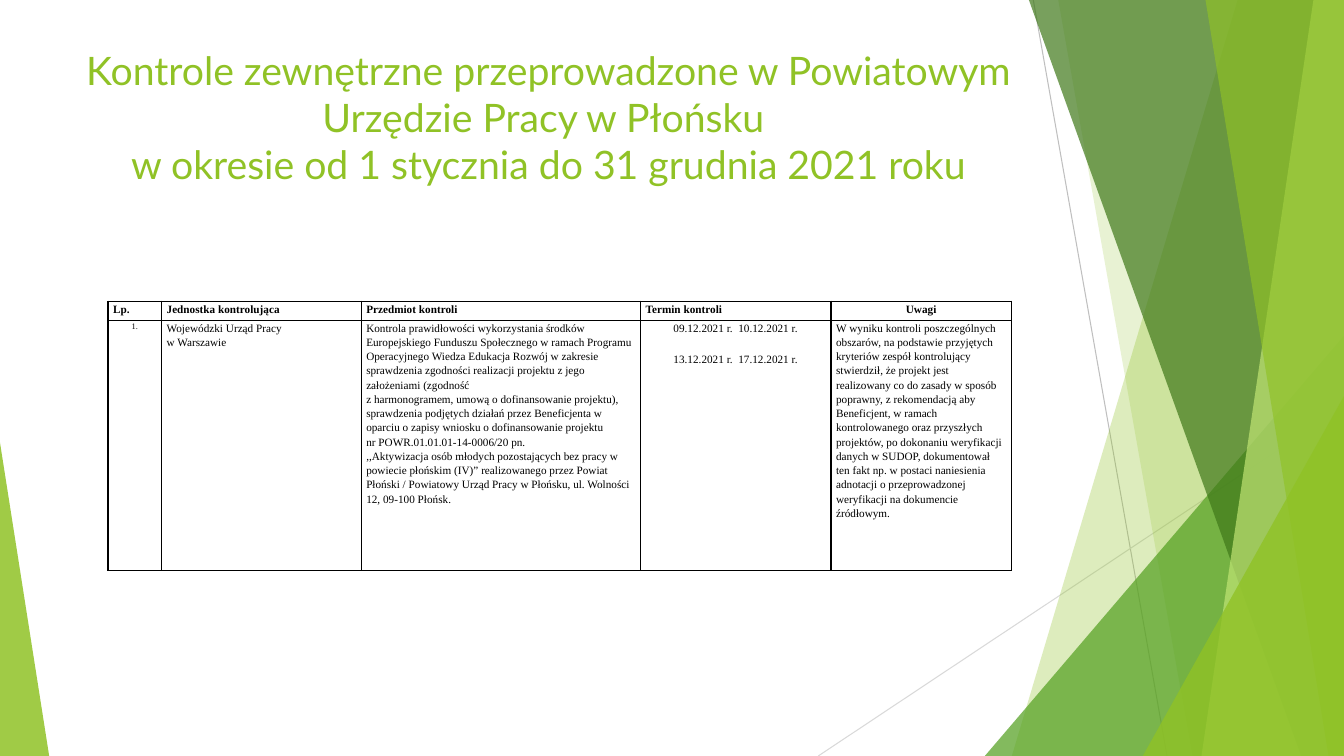
from lxml.etree import SubElement
from pptx import Presentation
from pptx.dml.color import RGBColor
from pptx.enum.shapes import MSO_CONNECTOR, MSO_SHAPE
from pptx.enum.text import MSO_ANCHOR, MSO_AUTO_SIZE, PP_ALIGN
from pptx.oxml import parse_xml
from pptx.oxml.ns import nsdecls, qn
from pptx.util import Cm, Pt

WIDE, HIGH = 33.87, 19.05
LIME, BLACK = "90C226", "000000"
LEFT, MID = PP_ALIGN.LEFT, PP_ALIGN.CENTER

TITLE = ("Kontrole zewnętrzne przeprowadzone w Powiatowym Urzędzie Pracy w Płońsku \v"
         "w okresie od 1 stycznia do 31 grudnia 2021 roku")
HEADS = ["Lp.", "Jednostka kontrolująca", "Przedmiot kontroli", "Termin kontroli", "Uwagi"]
ENTRY = [
    "1.",
    "Wojewódzki Urząd Pracy \vw Warszawie",
    "Kontrola prawidłowości wykorzystania środków Europejskiego Funduszu Społecznego "
    "w ramach Programu Operacyjnego Wiedza Edukacja Rozwój w zakresie sprawdzenia zgodności "
    "realizacji projektu z jego założeniami (zgodność \vz harmonogramem, umową o dofinansowanie "
    "projektu), sprawdzenia podjętych działań przez Beneficjenta w oparciu o zapisy wniosku "
    "o dofinansowanie projektu \vnr POWR.01.01.01-14-0006/20 pn. \v,,Aktywizacja osób młodych "
    "pozostających bez pracy w powiecie płońskim (IV)” realizowanego przez Powiat Płoński / "
    "Powiatowy Urząd Pracy w Płońsku, ul. Wolności 12, 09-100 Płońsk.",
    "09.12.2021 r.  10.12.2021 r.\n13.12.2021 r.  17.12.2021 r.",
    "W wyniku kontroli poszczególnych obszarów, na podstawie przyjętych kryteriów zespół "
    "kontrolujący stwierdził, że projekt jest realizowany co do zasady w sposób poprawny, "
    "z rekomendacją aby Beneficjent, w ramach kontrolowanego oraz przyszłych projektów, "
    "po dokonaniu weryfikacji danych w SUDOP, dokumentował ten fakt np. w postaci naniesienia "
    "adnotacji o przeprowadzonej weryfikacji na dokumencie źródłowym.",
]
COLS = [1.35, 5.03, 7.04, 4.8, 4.55]
ROWS = [
    (0.48, HEADS, [LEFT, LEFT, LEFT, LEFT, MID], [8] * 5, True),
    (6.3, ENTRY, [MID, LEFT, LEFT, MID, LEFT], [6, 8, 8, 8, 8], False),
]


def color(code):
    """Turn a hex string into a colour."""
    return RGBColor.from_string(code)


def apply(thing, values):
    """Set each named value on an object."""
    for name, value in values.items():
        setattr(thing, name, value)


def write(frame, text, para, font, code):
    """Fill a text frame and format its paragraphs and runs."""
    frame.text = text
    for item in frame.paragraphs:
        apply(item, para)
        for run in item.runs:
            apply(run.font, font)
            run.font.color.rgb = color(code)


def paint(shape, code, alpha):
    """Give a shape a see-through fill without line or shadow."""
    shape.shadow.inherit = False
    shape.fill.solid()
    shape.fill.fore_color.rgb = color(code)
    shape.line.fill.background()
    tint = shape.fill._xPr.find(".//" + qn("a:srgbClr"))
    SubElement(tint, qn("a:alpha"), val=str(alpha * 1000))


def ray(slide, start, end, code):
    """Draw a thin line between two points."""
    line = slide.shapes.add_connector(
        MSO_CONNECTOR.STRAIGHT, *[Cm(n) for n in (*start, *end)])
    line.line.width = Pt(0.75)
    line.line.color.rgb = color(code)
    SubElement(line._element.spPr, qn("a:effectLst"))


def band(slide, box, top, foot, code, alpha):
    """Draw a slanted band reaching the right side of the box."""
    x, y, w, h = box
    pen = slide.shapes.build_freeform(Cm(x + top), Cm(y), scale=1.0)
    ends = [(x + w, y), (x + w, y + h), (x + foot, y + h)]
    pen.add_line_segments([(Cm(a), Cm(b)) for a, b in ends], close=True)
    paint(pen.convert_to_shape(), code, alpha)


def wedge(slide, box, peak, code, alpha):
    """Draw a triangle with its peak at the given share of the width."""
    shape = slide.shapes.add_shape(MSO_SHAPE.ISOSCELES_TRIANGLE, *[Cm(n) for n in box])
    shape.adjustments[0] = peak
    paint(shape, code, alpha)


def facets(slide, box):
    """Draw the layered facets on the right side."""
    x, y, w, h = box

    def corner(wide, high):
        """Return a box in the lower right corner."""
        return x + w - wide, y + h - high, wide, high

    ray(slide, (x + 5.42, y), (x + 8.79, y + h), "BFBFBF")
    ray(slide, (x + w, y + 10.24), (x, y + h), "D9D9D9")
    band(slide, box, 10.57, 4.88, LIME, 30)
    band(slide, box, 6.05, 9.43, LIME, 20)
    wedge(slide, corner(9.05, 10.59), 1, "54A021", 72)
    for top, foot, code, alpha in [(5.31, 12.17, "3F7819", 70),
                                   (12.48, 9.66, "C0E474", 70),
                                   (9.76, 12.86, LIME, 65)]:
        band(slide, box, top, foot, code, alpha)
    wedge(slide, corner(5.07, 9.07), 1, LIME, 80)


def heading(slide, box):
    """Place and format the title."""
    title = slide.shapes.title
    apply(title, dict(zip(("left", "top", "width", "height"), map(Cm, box))))
    frame = title.text_frame
    apply(frame, {"word_wrap": True, "auto_size": MSO_AUTO_SIZE.NONE,
                  "vertical_anchor": MSO_ANCHOR.TOP})
    write(frame, TITLE, {"alignment": MID}, {"size": Pt(28), "name": "Lato"}, LIME)


def border(cell):
    """Rule all four sides of a cell."""
    props = cell._tc.get_or_add_tcPr()
    for side in ("lnL", "lnR", "lnT", "lnB"):
        props.append(parse_xml(
            f'<a:{side} {nsdecls("a")} w="12700"><a:solidFill>'
            f'<a:srgbClr val="{BLACK}"/></a:solidFill></a:{side}>'))


def audits(slide, box):
    """Build the table of audits."""
    frame = slide.shapes.add_table(len(ROWS), len(COLS), *[Cm(n) for n in box])
    table = frame.table
    apply(table, {"first_row": False, "horz_banding": False})
    for col, wide in zip(table.columns, COLS):
        col.width = Cm(wide)
    for row, (high, texts, sides, sizes, bold) in zip(table.rows, ROWS):
        row.height = Cm(high)
        for cell, text, side, size in zip(row.cells, texts, sides, sizes):
            apply(cell, {"margin_left": Cm(0.13), "margin_right": Cm(0.13),
                         "margin_top": 0, "margin_bottom": 0})
            border(cell)
            cell.fill.background()
            write(cell.text_frame, text, {"alignment": side, "line_spacing": 1.15},
                  {"size": Pt(size), "name": "Times New Roman", "bold": bold}, BLACK)
            for item in cell.text_frame.paragraphs[:-1]:
                item.space_after = Pt(12)


def main():
    """Build and save the slide."""
    deck = Presentation()
    apply(deck, {"slide_width": Cm(WIDE), "slide_height": Cm(HIGH)})
    slide = deck.slides.add_slide(deck.slide_layouts[5])
    facets(slide, (20.62, 0, 13.25, HIGH))
    wedge(slide, (0, 11.15, 1.24, 7.9), 0, LIME, 85)
    heading(slide, (1.88, 1.04, 23.88, 3.66))
    audits(slide, (2.72, 7.59, sum(COLS), 6.78))
    deck.save("out.pptx")


if __name__ == "__main__":
    main()
